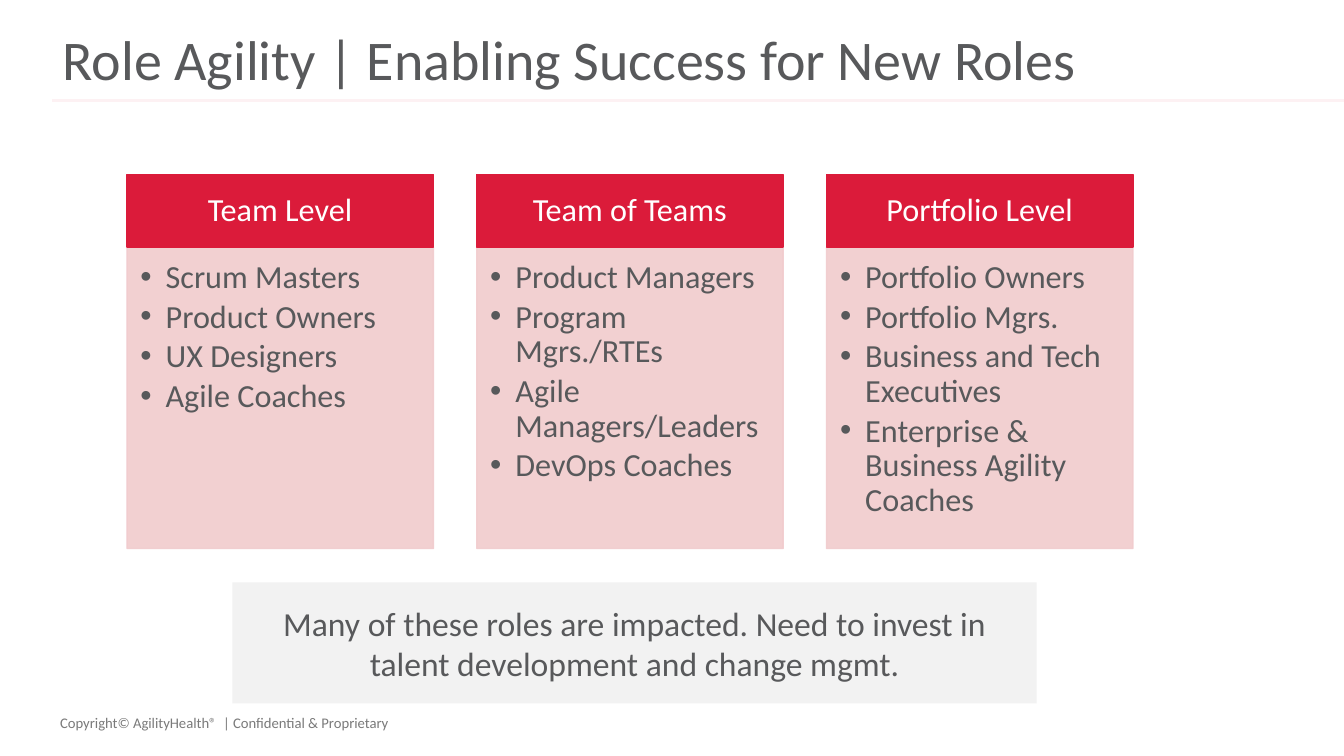
"""Build the role agility slide with three role columns and a takeaway."""
from dataclasses import dataclass
from typing import Any

from lxml import etree
from pptx import Presentation
from pptx import util as u
from pptx.dml.color import RGBColor
from pptx.enum import shapes, text
from pptx.oxml.ns import qn

CRIMSON = RGBColor(0xDB, 0x1B, 0x3A)
ROSE = RGBColor(0xF1, 0xCB, 0xCD)
BLUSH = RGBColor(0xFD, 0xF1, 0xF3)
PALE_GRAY = RGBColor(0xF2, 0xF2, 0xF2)
SLATE = RGBColor(0x58, 0x59, 0x5B)
GRAY = RGBColor(0x7A, 0x7A, 0x7A)
WHITE = RGBColor(0xFF, 0xFF, 0xFF)

COLUMN_LEFT, COLUMN_PITCH, COLUMN_WIDTH = 90.7, 249.85, 218.9
HEADER_TOP, HEADER_HEIGHT, LIST_HEIGHT = 124.5, 52, 215.3


@dataclass(frozen=True)
class RoleColumn:
    heading: str
    roles: tuple[str, ...]


@dataclass(frozen=True)
class TextStyle:
    size: float
    color: RGBColor
    align: text.PP_ALIGN = text.PP_ALIGN.LEFT
    anchor: text.MSO_ANCHOR = text.MSO_ANCHOR.MIDDLE
    margins: tuple[float, float, float, float] = (7.2, 3.6, 7.2, 3.6)
    line_spacing: float = 0.9
    space_before: float = 0
    bulleted: bool = False


COLUMNS = (
    RoleColumn("Team Level", ("Scrum Masters", "Product Owners", "UX Designers", "Agile Coaches")),
    RoleColumn("Team of Teams", ("Product Managers", "Program Mgrs./RTEs",
                                 "Agile Managers/Leaders", "DevOps Coaches")),
    RoleColumn("Portfolio Level", ("Portfolio Owners", "Portfolio Mgrs.", "Business and Tech Executives",
                                   "Enterprise & Business Agility Coaches")),
)
TITLE = TextStyle(40, SLATE)
HEADING = TextStyle(23, WHITE, text.PP_ALIGN.CENTER, margins=(13, 7.2, 13, 7.2))
ROLES = TextStyle(23, SLATE, anchor=text.MSO_ANCHOR.TOP, margins=(9.6, 9.6, 13, 14.4),
                  space_before=3.5, bulleted=True)
TAKEAWAY = TextStyle(24, SLATE, text.PP_ALIGN.CENTER, line_spacing=1)
COPYRIGHT = TextStyle(10.5, GRAY, anchor=text.MSO_ANCHOR.TOP, margins=(0, 0, 0, 0), line_spacing=1)


def apply(target: Any, values: dict[str, Any]) -> None:
    for name, value in values.items():
        setattr(target, name, value)


def place(shape: Any, left: float, top: float, width: float, height: float) -> None:
    apply(shape, {"left": u.Pt(left), "top": u.Pt(top), "width": u.Pt(width), "height": u.Pt(height)})


def add_bullet(paragraph: Any, color: RGBColor) -> None:
    properties = paragraph._p.get_or_add_pPr()
    properties.set("marL", str(u.Pt(18)))
    properties.set("indent", str(-u.Pt(18)))
    bullet_color = etree.SubElement(properties, qn("a:buClr"))
    etree.SubElement(bullet_color, qn("a:srgbClr"), val=str(color))
    etree.SubElement(properties, qn("a:buFont"), typeface="Arial")
    etree.SubElement(properties, qn("a:buChar"), char="•")


def write(shape: Any, lines: tuple[str, ...], style: TextStyle) -> None:
    frame = shape.text_frame
    left, top, right, bottom = map(u.Pt, style.margins)
    apply(frame, {"word_wrap": True, "auto_size": text.MSO_AUTO_SIZE.NONE, "vertical_anchor": style.anchor,
                  "margin_left": left, "margin_top": top, "margin_right": right, "margin_bottom": bottom})
    for index, line in enumerate(lines):
        paragraph = frame.add_paragraph() if index else frame.paragraphs[0]
        if style.bulleted:
            add_bullet(paragraph, style.color)
        apply(paragraph, {"alignment": style.align, "line_spacing": style.line_spacing,
                          "space_before": u.Pt(style.space_before if index else 0)})
        run = paragraph.add_run()
        run.text = line
        apply(run.font, {"name": "Calibri", "size": u.Pt(style.size), "bold": False})
        run.font.color.rgb = style.color


def paint(shape: Any, color: RGBColor, opacity: int = 100, outlined: bool = True) -> None:
    shape.fill.solid()
    shape.fill.fore_color.rgb = color
    if outlined:
        shape.line.color.rgb = color
        shape.line.width = u.Pt(1)
    else:
        shape.line.fill.background()
    if opacity < 100:
        for swatch in shape._element.spPr.iter(qn("a:srgbClr")):
            etree.SubElement(swatch, qn("a:alpha"), val=str(opacity * 1000))


def add_box(slide: Any, left: float, top: float, width: float, height: float) -> Any:
    box = slide.shapes.add_shape(shapes.MSO_SHAPE.RECTANGLE, 0, 0, 0, 0)
    place(box, left, top, width, height)
    box.shadow.inherit = False
    return box


def add_rule(slide: Any) -> None:
    rule = slide.shapes.add_connector(shapes.MSO_CONNECTOR.STRAIGHT, u.Pt(37.5), u.Pt(72), u.Pt(960), u.Pt(72))
    rule.line.color.rgb = BLUSH
    rule.line.width = u.Pt(2)
    etree.SubElement(rule._element.spPr, qn("a:effectLst"))


def add_column(slide: Any, role_list: Any, column: RoleColumn, left: float) -> None:
    header = add_box(slide, left, HEADER_TOP, COLUMN_WIDTH, HEADER_HEIGHT)
    paint(header, CRIMSON)
    write(header, (column.heading,), HEADING)
    place(role_list, left, HEADER_TOP + HEADER_HEIGHT, COLUMN_WIDTH, LIST_HEIGHT)
    paint(role_list, ROSE, opacity=90)
    write(role_list, column.roles, ROLES)


def main() -> None:
    presentation = Presentation()
    apply(presentation, {"slide_width": u.Pt(960), "slide_height": u.Pt(540)})
    slide = presentation.slides.add_slide(presentation.slide_layouts.get_by_name("Comparison"))
    title, *bodies = slide.placeholders
    add_rule(slide)
    place(title, 37.5, 19.5, 885, 50.5)
    write(title, ("Role Agility | Enabling Success for New Roles",), TITLE)

    for index, (body, column) in enumerate(zip(bodies, COLUMNS)):
        add_column(slide, body, column, COLUMN_LEFT + index * COLUMN_PITCH)
    for spare in bodies[len(COLUMNS):]:
        spare._element.getparent().remove(spare._element)

    takeaway = add_box(slide, 166, 416, 574.5, 86.4)
    paint(takeaway, PALE_GRAY, outlined=False)
    write(takeaway, ("Many of these roles are impacted. Need to invest in talent development and change mgmt.",),
          TAKEAWAY)
    footer = slide.shapes.add_textbox(u.Pt(43), u.Pt(510), u.Pt(324), u.Pt(20))
    write(footer, ("Copyright© AgilityHealth®  | Confidential & Proprietary",), COPYRIGHT)
    presentation.save("out.pptx")


if __name__ == "__main__":
    main()
